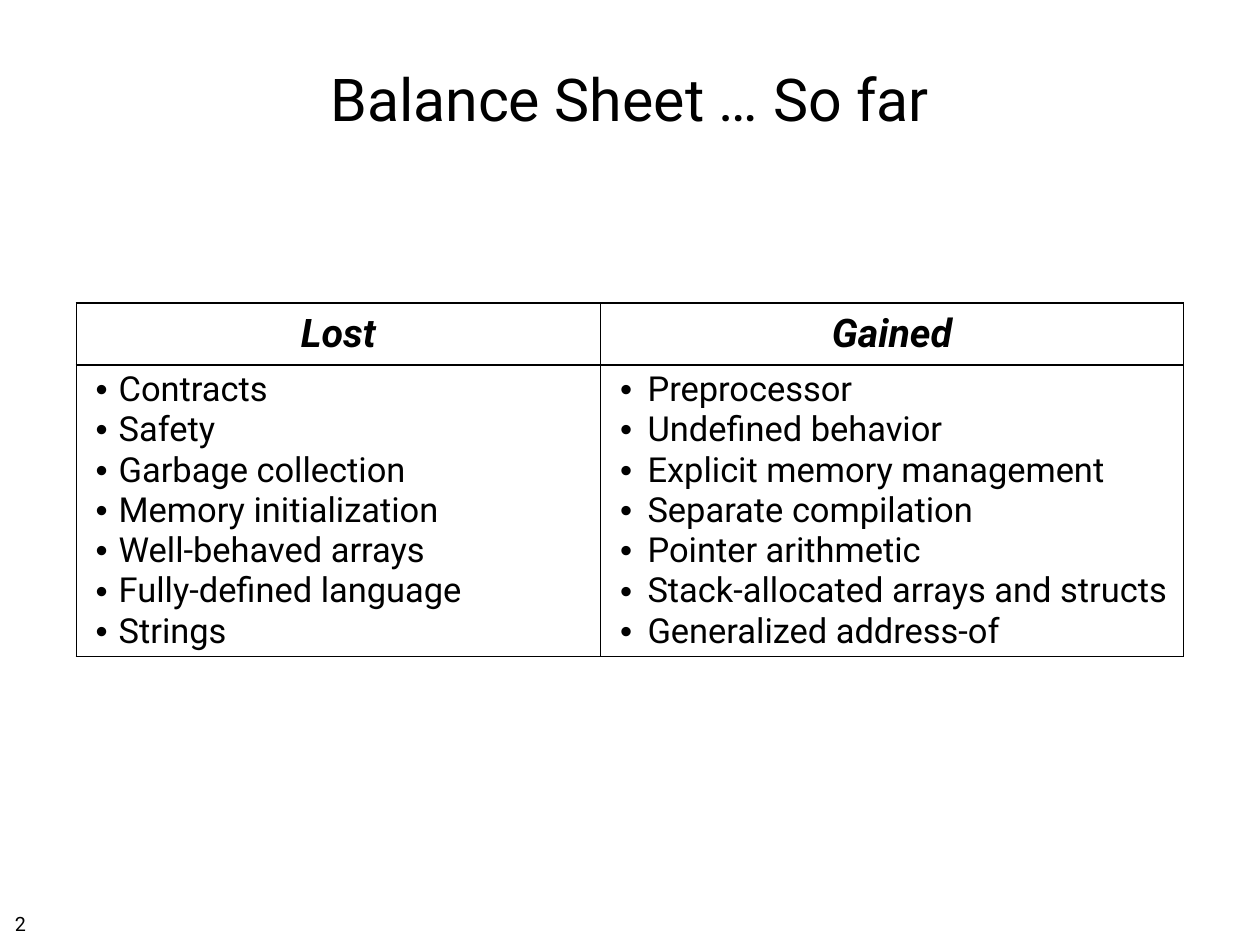
from lxml import etree
from pptx import Presentation
from pptx import util as u
from pptx.dml.color import RGBColor
from pptx.enum import text
from pptx.oxml import ns

BLACK = RGBColor(0x00, 0x00, 0x00)
FONT = "Roboto"
TITLE_ONLY = 5
INSET = 4.32

# Heading, left indent and hanging indent in points, items
COLUMNS = [
    ("Lost", 27.36, 18.72, [
        "Contracts", "Safety", "Garbage collection", "Memory initialization",
        "Well-behaved arrays", "Fully-defined language", "Strings"]),
    ("Gained", 30.96, 22.32, [
        "Preprocessor", "Undefined behavior", "Explicit memory management",
        "Separate compilation", "Pointer arithmetic",
        "Stack-allocated arrays and structs", "Generalized address-of"]),
]
COLUMN_WIDTHS = [426.24, 473.76]
ROW_HEIGHTS = [50.4, 236.5]


def set_values(target, values):
    for name, value in values.items():
        setattr(target, name, value)


def add_run(paragraph, words, size, **style):
    run = paragraph.add_run()
    run.text = words
    set_values(run.font, {"name": FONT, "size": u.Pt(size), **style})
    run.font.color.rgb = BLACK


def set_frame(frame, **values):
    insets = dict.fromkeys(
        ["margin_left", "margin_top", "margin_right", "margin_bottom"], u.Pt(INSET))
    set_values(frame, {**insets, "auto_size": text.MSO_AUTO_SIZE.NONE, **values})


def add_title(slide, words):
    title = slide.shapes.title
    set_values(title, {"left": u.Pt(74.88), "top": u.Pt(20.16),
                       "width": u.Pt(874.08), "height": u.Pt(118.08)})
    set_frame(title.text_frame, vertical_anchor=text.MSO_ANCHOR.MIDDLE, word_wrap=True)
    paragraph = title.text_frame.paragraphs[0]
    paragraph.alignment = text.PP_ALIGN.CENTER
    add_run(paragraph, words, 48)


def add_bullet(paragraph, left, hanging):
    properties = paragraph._p.get_or_add_pPr()
    properties.set("marL", str(u.Pt(left)))
    properties.set("indent", str(-u.Pt(hanging)))
    etree.SubElement(properties, ns.qn("a:buFont"), typeface="Arial")
    etree.SubElement(properties, ns.qn("a:buChar"), char="•")


def format_cell(cell):
    properties = cell._tc.get_or_add_tcPr()
    for side in "LRTB":
        line = etree.SubElement(properties, ns.qn(f"a:ln{side}"), w=str(u.Pt(1)))
        fill = etree.SubElement(line, ns.qn("a:solidFill"))
        etree.SubElement(fill, ns.qn("a:srgbClr"), val=str(BLACK))
    cell.fill.background()
    cell.vertical_anchor = text.MSO_ANCHOR.MIDDLE


def add_balance_table(slide):
    table = slide.shapes.add_table(
        len(ROW_HEIGHTS), len(COLUMNS), u.Pt(61.92), u.Pt(246.24),
        u.Pt(sum(COLUMN_WIDTHS)), u.Pt(sum(ROW_HEIGHTS))).table
    set_values(table, {"first_row": False, "horz_banding": False})
    for row, height in zip(table.rows, ROW_HEIGHTS):
        row.height = u.Pt(height)
    for column, width in zip(table.columns, COLUMN_WIDTHS):
        column.width = u.Pt(width)
    for cell in table.iter_cells():
        format_cell(cell)

    for index, (heading, left, hanging, items) in enumerate(COLUMNS):
        paragraph = table.cell(0, index).text_frame.paragraphs[0]
        paragraph.alignment = text.PP_ALIGN.CENTER
        add_run(paragraph, heading, 32, bold=True, italic=True)
        frame = table.cell(1, index).text_frame
        for number, item in enumerate(items):
            paragraph = frame.add_paragraph() if number else frame.paragraphs[0]
            add_bullet(paragraph, left, hanging)
            add_run(paragraph, item, 28, bold=False)


def add_page_number(slide, number):
    box = slide.shapes.add_textbox(u.Pt(7.92), u.Pt(736.56), u.Pt(26.64), u.Pt(25.2))
    set_frame(box.text_frame, word_wrap=False)
    add_run(box.text_frame.paragraphs[0], number, 16)


def main():
    presentation = Presentation()
    set_values(presentation, {"slide_width": u.Pt(1024), "slide_height": u.Pt(768)})
    slide = presentation.slides.add_slide(presentation.slide_layouts[TITLE_ONLY])

    # Title, table and page number
    add_title(slide, "Balance Sheet … So far")
    add_balance_table(slide)
    add_page_number(slide, "2")
    presentation.save("out.pptx")


main()
